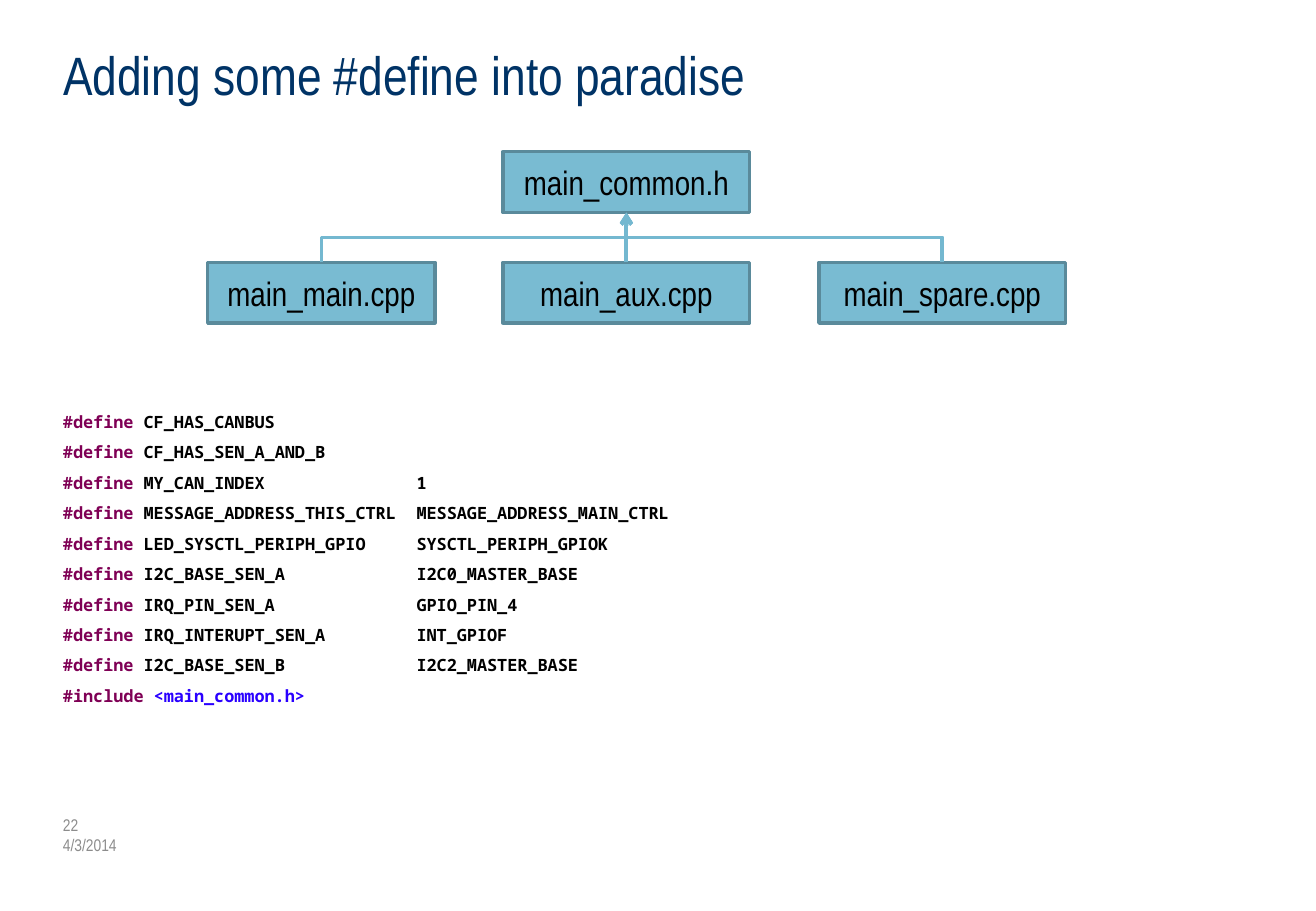
import pptx
import pptx.util
import pptx.dml.color
import pptx.enum.shapes
import pptx.enum.text
import pptx.oxml
import pptx.oxml.ns

PX = 9144  # EMU, 100 px to the inch
WIDTH, HEIGHT = 1083, 750
MARGIN, TEXT_WIDTH = 42, 1000
TITLE = "Adding some #define into paradise"
HEADER = ("main_common.h", 414, 203)  # text, left, width
SOURCES = [
    ("main_main.cpp", 171, 187),
    ("main_aux.cpp", 414, 203),
    ("main_spare.cpp", 674, 203),
]
HEADER_TOP, SOURCE_TOP, FILE_HEIGHT = 125, 216, 50
DEFINES = [
    ("CF_HAS_CANBUS", ""),
    ("CF_HAS_SEN_A_AND_B", ""),
    ("MY_CAN_INDEX", "1"),
    ("MESSAGE_ADDRESS_THIS_CTRL", "MESSAGE_ADDRESS_MAIN_CTRL"),
    ("LED_SYSCTL_PERIPH_GPIO", "SYSCTL_PERIPH_GPIOK"),
    ("I2C_BASE_SEN_A", "I2C0_MASTER_BASE"),
    ("IRQ_PIN_SEN_A", "GPIO_PIN_4"),
    ("IRQ_INTERUPT_SEN_A", "INT_GPIOF"),
    ("I2C_BASE_SEN_B", "I2C2_MASTER_BASE"),
]
INCLUDE = "<main_common.h>"
VALUE_TAB = 291
FOOTER = ["22", "4/3/2014"]

NAVY, BLACK, GREY = "003366", "000000", "8C8C8C"
KEYWORD, INCLUDED = "7F0055", "2A00FF"
FILE_FILL, FILE_LINE, ARROW = "79BBD2", "5A8A9B", "74B8D0"
SANS, MONO = "Arial Narrow", "Noto Sans Mono"
ALIGN = pptx.enum.text.PP_ALIGN
ANCHOR = pptx.enum.text.MSO_ANCHOR
CONNECTOR = pptx.enum.shapes.MSO_CONNECTOR


def rgb(color):
    return pptx.dml.color.RGBColor.from_string(color)


def place(left, top, width, height):
    return [length * PX for length in (left, top, width, height)]


def write(shape, lines, font=SANS, size=10, bold=False, align=ALIGN.LEFT,
          anchor=ANCHOR.TOP, space=0, tab=None):
    """Fill a shape with lines, each a list of (text, color) spans."""
    frame = shape.text_frame
    frame.word_wrap = True
    frame.auto_size = pptx.enum.text.MSO_AUTO_SIZE.NONE
    frame.vertical_anchor = anchor
    for index, spans in enumerate(lines):
        para = frame.add_paragraph() if index else frame.paragraphs[0]
        para.alignment = align
        para.space_before = pptx.util.Pt(space if index else 0)
        if tab:
            para._p.get_or_add_pPr().append(pptx.oxml.parse_xml(
                f'<a:tabLst {pptx.oxml.ns.nsdecls("a")}>'
                f'<a:tab pos="{tab * PX}" algn="l"/></a:tabLst>'))
        for text, color in spans:
            span = para.add_run()
            span.text = text
            span.font.name = font
            span.font.size = pptx.util.Pt(size)
            span.font.bold = bold
            span.font.color.rgb = rgb(color)


def add_file(page, name, left, top, width):
    box = page.shapes.add_shape(pptx.enum.shapes.MSO_SHAPE.RECTANGLE,
                                *place(left, top, width, FILE_HEIGHT))
    box.shadow.inherit = False
    box.fill.solid()
    box.fill.fore_color.rgb = rgb(FILE_FILL)
    box.line.color.rgb = rgb(FILE_LINE)
    box.line.width = pptx.util.Pt(2)
    write(box, [[(name, BLACK)]], size=20, align=ALIGN.CENTER, anchor=ANCHOR.MIDDLE)
    return box


def add_arrow(page, source, header):
    """Join the top of source to the bottom of header, bending where they are offset."""
    start_x = source.left + source.width // 2
    end_x = header.left + header.width // 2
    start_y, end_y = source.top, header.top + header.height
    kind = CONNECTOR.STRAIGHT if start_x == end_x else CONNECTOR.ELBOW
    arrow = page.shapes.add_connector(kind, start_x, start_y, end_x, end_y)
    arrow.begin_connect(source, 0)
    arrow.end_connect(header, 2)
    properties = arrow.element.spPr
    if kind == CONNECTOR.ELBOW:
        # A quarter turn makes the elbow leave and arrive vertically.
        rise, run = start_y - end_y, abs(end_x - start_x)
        arrow.left = (start_x + end_x - rise) // 2
        arrow.top = (start_y + end_y - run) // 2
        arrow.width, arrow.height = rise, run
        frame = properties.find(pptx.oxml.ns.qn("a:xfrm"))
        frame.set("rot", str(270 * 60000))
        frame.set("flipH", "0")
        frame.set("flipV", "1" if start_x > end_x else "0")
    arrow.line.color.rgb = rgb(ARROW)
    arrow.line.width = pptx.util.Pt(2.25)
    namespace = pptx.oxml.ns.nsdecls("a")
    arrow.line._get_or_add_ln().append(
        pptx.oxml.parse_xml(f'<a:tailEnd {namespace} type="arrow"/>'))
    properties.append(pptx.oxml.parse_xml(f"<a:effectLst {namespace}/>"))


def main():
    deck = pptx.Presentation()
    deck.slide_width, deck.slide_height = WIDTH * PX, HEIGHT * PX
    page = deck.slides.add_slide(deck.slide_layouts[5])

    title = page.shapes.title
    title.left, title.top, title.width, title.height = place(MARGIN, 29, TEXT_WIDTH, 75)
    write(title, [[(TITLE, NAVY)]], size=32)

    code = [[("#define ", KEYWORD), (f"{name}\t{value}" if value else name, BLACK)]
            for name, value in DEFINES]
    code.append([("#include ", KEYWORD), (INCLUDE, INCLUDED)])
    listing = page.shapes.add_textbox(*place(MARGIN, 334, TEXT_WIDTH, 306))
    write(listing, code, font=MONO, bold=True, space=6, tab=VALUE_TAB)

    footer = page.shapes.add_textbox(*place(MARGIN, 662, 217, 50))
    write(footer, [[(text, GREY)] for text in FOOTER], anchor=ANCHOR.MIDDLE)

    sources = [add_file(page, name, left, SOURCE_TOP, width)
               for name, left, width in SOURCES]
    name, left, width = HEADER
    header = add_file(page, name, left, HEADER_TOP, width)
    for source in sources:
        add_arrow(page, source, header)

    deck.save("out.pptx")


if __name__ == "__main__":
    main()
